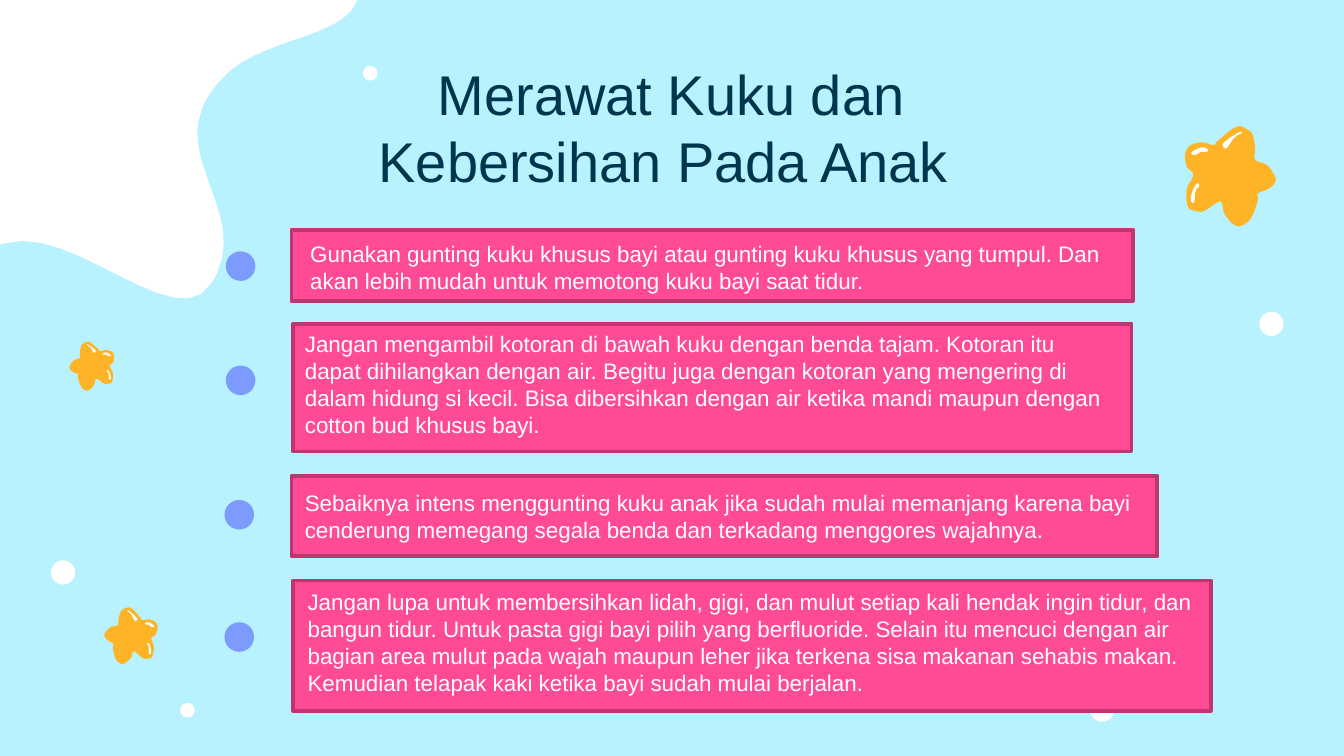
from copy import deepcopy
from dataclasses import dataclass
from math import cos, radians, sin

from pptx import Presentation
from pptx.dml.color import RGBColor
from pptx.enum.shapes import MSO_SHAPE
from pptx.enum.text import MSO_ANCHOR, PP_ALIGN
from pptx.oxml.ns import qn
from pptx.util import Inches, Pt


@dataclass(frozen=True)
class Theme:
    """Colours, font and type sizes of the slide."""
    sky: str = "B8F2FF"
    white: str = "FFFFFF"
    navy: str = "00354E"
    pink: str = "FF4A95"
    dark_pink: str = "BD376E"
    violet: str = "7D9BFF"
    gold: str = "FFB428"
    font: str = "Arial"
    title_size: int = 30
    body_size: int = 12
    leading: float = 1.2


THEME = Theme()

CLOUD_START = (-1.41, -0.27)
CLOUD_CURVES = [
    (-1.76, 0.53, -1.64, 1.6, -1.28, 2.41),
    (-1.12, 2.75, -0.61, 4.03, -0.16, 3.28),
    (-0.15, 3.27, -0.14, 3.25, -0.14, 3.23),
    (0.02, 2.88, -0.34, 2.3, -0.2, 1.99),
    (-0.17, 1.91, -0.09, 1.84, 0.04, 1.81),
    (0.54, 1.66, 1.32, 2.52, 1.57, 2.11),
    (1.59, 2.08, 1.61, 2.05, 1.62, 2.02),
    (1.81, 1.59, 1.33, 1.2, 1.51, 0.79),
    (1.55, 0.7, 1.62, 0.61, 1.72, 0.52),
    (2.02, 0.28, 2.54, 0.27, 2.65, 0.02),
    (2.7, -0.1, 2.65, -0.29, 2.41, -0.6),
    (1.93, -1.21, 0.74, -1.54, 0.02, -1.4),
    (-0.71, -1.25, -1.17, -0.82, -1.41, -0.27),
]

STAR_BODY = [
    (0.09, -0.36), (0.03, -0.34), (-0.08, -0.25), (-0.11, -0.22), (-0.19, -0.24),
    (-0.28, -0.22), (-0.32, -0.16), (-0.31, -0.06), (-0.26, 0), (-0.31, 0.11),
    (-0.3, 0.24), (-0.24, 0.27), (-0.18, 0.27), (-0.06, 0.2), (-0.03, 0.29),
    (0.04, 0.37), (0.1, 0.38), (0.17, 0.32), (0.22, 0.19), (0.22, 0.14),
    (0.29, 0.11), (0.34, 0.07), (0.35, 0.02), (0.29, -0.07), (0.2, -0.11),
    (0.2, -0.2), (0.18, -0.3), (0.15, -0.33),
]
STAR_GLINTS = [
    [(0.09, -0.32), (0.02, -0.28), (-0.04, -0.23), (-0.03, -0.2), (-0.01, -0.2),
     (0.04, -0.27), (0.08, -0.3), (0.1, -0.31)],
    [(-0.17, -0.2), (-0.21, -0.2), (-0.27, -0.17), (-0.27, -0.15), (-0.24, -0.15),
     (-0.2, -0.17), (-0.17, -0.17), (-0.15, -0.18)],
    [(-0.22, 0.07), (-0.24, 0.07), (-0.27, 0.13), (-0.28, 0.19), (-0.26, 0.21),
     (-0.25, 0.18), (-0.25, 0.16), (-0.24, 0.11), (-0.22, 0.09)],
]

STARS = [
    dict(center=(9.14, 1.3)),
    dict(center=(0.69, 2.72), scale=0.49, turn=1.4, mirror=True),
    dict(center=(0.98, 4.73), scale=0.57, turn=8, mirror=True),
]
SNOW = [(9.37, 2.32, 0.18), (2.7, 0.49, 0.11), (0.38, 4.17, 0.18),
        (1.34, 5.23, 0.11), (8.11, 5.19, 0.18)]

TIPS = [
    dict(panel=(2.17, 1.71, 6.26, 0.53), box=(2.21, 1.74, 6.48, 0.5), dot=(1.68, 1.87),
         text="Gunakan gunting kuku khusus bayi atau gunting kuku khusus yang tumpul. "
              "Dan akan lebih mudah untuk memotong kuku bayi saat tidur."),
    dict(panel=(2.18, 2.41, 6.24, 0.95), box=(2.17, 2.41, 6.22, 0.91), dot=(1.68, 2.72),
         text="Jangan mengambil kotoran di bawah kuku dengan benda tajam. Kotoran itu "
              "dapat dihilangkan dengan air. Begitu juga dengan kotoran yang mengering di "
              "dalam hidung si kecil. Bisa dibersihkan dengan air ketika mandi maupun dengan "
              "cotton bud khusus bayi."),
    dict(panel=(2.17, 3.54, 6.44, 0.6), box=(2.17, 3.59, 6.64, 0.5), dot=(1.67, 3.72),
         text="Sebaiknya intens menggunting kuku anak jika sudah mulai memanjang karena bayi "
              "cenderung memegang segala benda dan terkadang menggores wajahnya."),
    dict(panel=(2.18, 4.32, 6.83, 0.97), box=(2.19, 4.33, 6.82, 0.91), dot=(1.67, 4.63),
         text="Jangan lupa untuk membersihkan lidah, gigi, dan mulut setiap kali hendak ingin "
              "tidur, dan bangun tidur. Untuk pasta gigi bayi pilih yang berfluoride. Selain "
              "itu mencuci dengan air bagian area mulut pada wajah maupun leher jika terkena "
              "sisa makanan sehabis makan. Kemudian telapak kaki ketika bayi sudah mulai "
              "berjalan."),
]


def rgb(color):
    """Turn a hex string into a colour."""
    return RGBColor.from_string(color)


def paint(shape, fill, line=None):
    """Give a shape a flat fill and an optional outline."""
    shape.shadow.inherit = False
    shape.fill.solid()
    shape.fill.fore_color.rgb = rgb(fill)
    if line:
        shape.line.color.rgb = rgb(line)
        shape.line.width = Pt(2)
    else:
        shape.line.fill.background()


def write_text(shape, text, *, size, color, align=PP_ALIGN.LEFT):
    """Write one formatted paragraph into a shape."""
    frame = shape.text_frame
    frame.word_wrap = True
    frame.vertical_anchor = MSO_ANCHOR.TOP
    paragraph = frame.paragraphs[0]
    paragraph.text = text
    paragraph.alignment = align
    paragraph.line_spacing = Pt(size * THEME.leading)
    paragraph.space_before = Pt(0)
    for run in paragraph.runs:
        run.font.name = THEME.font
        run.font.size = Pt(size)
        run.font.color.rgb = rgb(color)
    for line_break in paragraph._p.findall(qn("a:br")):
        line_break.insert(0, deepcopy(paragraph.runs[0]._r.rPr))


def add_preset(slide, kind, box, fill, line=None):
    """Add a painted preset shape at a box given in inches."""
    shape = slide.shapes.add_shape(kind, *map(Inches, box))
    paint(shape, fill, line)


def trace_curves(start, curves, steps=12):
    """Sample a chain of cubic Bezier curves into points."""
    points = [start]
    for x1, y1, x2, y2, x3, y3 in curves:
        x0, y0 = points[-1]
        for step in range(1, steps + 1):
            t = step / steps
            u = 1 - t
            weights = (u ** 3, 3 * u * u * t, 3 * u * t * t, t ** 3)
            points.append((sum(w * x for w, x in zip(weights, (x0, x1, x2, x3))),
                           sum(w * y for w, y in zip(weights, (y0, y1, y2, y3)))))
    return points


def smooth_outline(anchors):
    """Pass a closed smooth curve through the anchor points."""
    count = len(anchors)
    curves = []
    for index, (x, y) in enumerate(anchors):
        before = anchors[index - 1]
        end = anchors[(index + 1) % count]
        after = anchors[(index + 2) % count]
        curves.append((x + (end[0] - before[0]) / 6, y + (end[1] - before[1]) / 6,
                       end[0] - (after[0] - x) / 6, end[1] - (after[1] - y) / 6, *end))
    return trace_curves(anchors[0], curves, steps=5)


def add_outline(shapes, points, fill):
    """Add a closed freeform through points given in inches."""
    corners = [(Inches(x), Inches(y)) for x, y in points]
    builder = shapes.build_freeform(*corners[0])
    builder.add_line_segments(corners[1:], close=True)
    paint(builder.convert_to_shape(), fill)


def add_star(slide, center, scale=1, turn=0, mirror=False):
    """Add a grouped star with three glints."""
    group = slide.shapes.add_group_shape()
    side = -1 if mirror else 1
    cosine, sine = cos(radians(turn)), sin(radians(turn))
    for number, anchors in enumerate([STAR_BODY, *STAR_GLINTS]):
        points = [(center[0] + scale * (side * x * cosine - y * sine),
                   center[1] + scale * (side * x * sine + y * cosine))
                  for x, y in smooth_outline(anchors)]
        add_outline(group.shapes, points, THEME.white if number else THEME.gold)


def add_title(slide, text):
    """Place and fill the title placeholder."""
    title = slide.shapes.title
    title.left, title.top, title.width, title.height = map(Inches, (0.78, 0.34, 8.43, 0.72))
    title.text_frame.margin_top = Inches(0.1)
    write_text(title, text, size=THEME.title_size, color=THEME.navy, align=PP_ALIGN.CENTER)


def add_tip(slide, panel, box, dot, text):
    """Add one tip: a dot, a panel and its text."""
    add_preset(slide, MSO_SHAPE.OVAL, (*dot, 0.22, 0.22), THEME.violet)
    add_preset(slide, MSO_SHAPE.RECTANGLE, panel, THEME.pink, THEME.dark_pink)
    text_box = slide.shapes.add_textbox(*map(Inches, box))
    write_text(text_box, text, size=THEME.body_size, color=THEME.white)


def main():
    """Build the slide and save it."""
    presentation = Presentation()
    presentation.slide_width = Inches(10)
    presentation.slide_height = Inches(10 * 9 / 16)
    slide = presentation.slides.add_slide(presentation.slide_layouts[5])
    slide.background.fill.solid()
    slide.background.fill.fore_color.rgb = rgb(THEME.sky)
    add_outline(slide.shapes, trace_curves(CLOUD_START, CLOUD_CURVES), THEME.white)
    for left, top, size in SNOW:
        add_preset(slide, MSO_SHAPE.OVAL, (left, top, size, size), THEME.white)
    add_title(slide, "Merawat Kuku dan\vKebersihan Pada Anak ")
    for star in STARS:
        add_star(slide, **star)
    for tip in TIPS:
        add_tip(slide, **tip)
    presentation.save("out.pptx")


if __name__ == "__main__":
    main()
